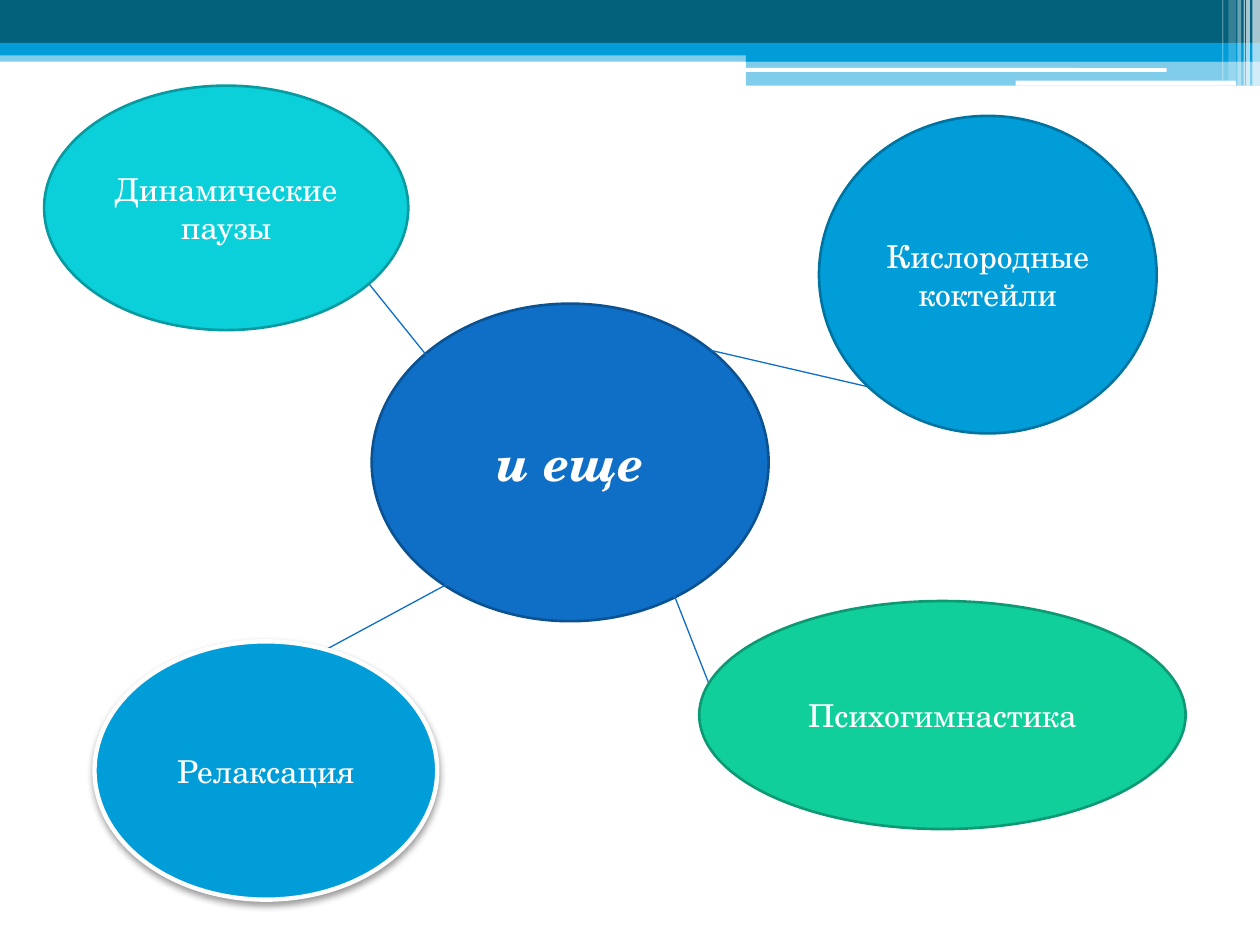
from lxml import etree
from pptx import Presentation
from pptx import util as u
from pptx.dml.color import RGBColor
from pptx.enum import shapes, text
from pptx.oxml import ns

KIND = shapes.MSO_SHAPE


def rgb(value):
    return RGBColor.from_string(value)


def add(parent, tag, **attrs):
    return etree.SubElement(parent, ns.qn(tag), attrs)


class Deck:
    font = "TeX Gyre Schola"
    white = "FFFFFF"
    dark = "04617B"
    blue = "009DD9"
    link = "0F6FC6"

    def __init__(self, width, height):
        self.prs = Presentation()
        self.prs.slide_width = u.Inches(width)
        self.prs.slide_height = u.Inches(height)
        self.s = self.prs.slides.add_slide(self.prs.slide_layouts[6])

    def shape(self, kind, box, color):
        sp = self.s.shapes.add_shape(kind, *[u.Inches(n) for n in box])
        sp.shadow.inherit = False
        sp.fill.solid()
        sp.fill.fore_color.rgb = rgb(color)
        sp.line.fill.background()
        return sp

    def bar(self, box, color, alpha=100, kind=KIND.RECTANGLE):
        sp = self.shape(kind, box, color)
        if alpha < 100:
            clr = sp._element.spPr.find(".//" + ns.qn("a:srgbClr"))
            add(clr, "a:alpha", val=str(alpha * 1000))

    def bubble(self, box, color, edge, words, size=18, strong=None, width=1.5):
        sp = self.shape(KIND.OVAL, box, color)
        sp.line.color.rgb = rgb(edge)
        sp.line.width = u.Pt(width)
        tf = sp.text_frame
        tf.word_wrap = True
        tf.vertical_anchor = text.MSO_ANCHOR.MIDDLE
        p = tf.paragraphs[0]
        p.alignment = text.PP_ALIGN.CENTER
        r = p.add_run()
        r.text = words
        r.font.name = self.font
        r.font.size = u.Pt(size)
        r.font.bold = r.font.italic = strong
        r.font.color.rgb = rgb(self.white)
        return sp

    def drop_shadow(self, sp):
        effects = sp._element.spPr.find(ns.qn("a:effectLst"))
        shadow = add(effects, "a:outerShdw", blurRad=str(u.Pt(4.1)), dist=str(u.Pt(2)),
                     dir="5400000", algn="ctr", rotWithShape="0")
        add(add(shadow, "a:srgbClr", val="000000"), "a:alpha", val="40000")

    def line(self, *ends):
        c = self.s.shapes.add_connector(shapes.MSO_CONNECTOR.STRAIGHT,
                                        *[u.Inches(n) for n in ends])
        c.line.color.rgb = rgb(self.link)
        c.line.width = u.Pt(0.75)
        add(c._element.spPr, "a:effectLst")


def main():
    d = Deck(10, 7.5)

    # Header bands
    d.bar((0, 0.4, 10, 0.09), d.blue, 50)
    d.bar((0, 0, 10, 0.34), d.dark)
    d.bar((0, 0.34, 10, 0.1), d.blue)
    d.bar((5.92, 0.39, 4.08, 0.1), d.blue)
    d.bar((5.92, 0.48, 4.08, 0.2), d.blue, 50)
    for box in ((5.91, 0.54, 3.35, 0.03), (8.06, 0.64, 1.75, 0.04)):
        d.bar(box, d.white, kind=KIND.ROUNDED_RECTANGLE)

    # Pale stripes at the right edge
    for left, width, height, alpha in (
            (9.94, 0.06, 0.68, 65), (9.89, 0.03, 0.68, 65), (9.87, 0.01, 0.68, 60),
            (9.82, 0.03, 0.68, 40), (9.75, 0.06, 0.64, 20), (9.7, 0.01, 0.64, 30)):
        d.bar((left, 0, width, height), d.white, alpha)

    # Central topic
    d.bubble((2.95, 2.41, 3.15, 2.52), d.link, "0B5292", "и еще", 28, True)

    # Branches: each line lies under its own bubble
    d.line(2.87, 2.18, 3.82, 3.36)
    d.bubble((0.35, 0.68, 2.89, 1.94), "0BD0D9", "089AA1", "Динамические паузы")
    d.line(5.64, 2.78, 6.89, 3.07)
    d.bubble((6.5, 0.92, 2.68, 2.52), d.blue, "0074A1", "Кислородные коктейли")
    d.line(3.58, 4.62, 2.56, 5.17)
    relax = d.bubble((0.75, 5.09, 2.72, 2.05), d.blue, d.white, "Релаксация", width=2.5)
    d.drop_shadow(relax)
    d.line(5.31, 4.62, 5.71, 5.64)
    d.bubble((5.55, 4.77, 3.86, 1.81), "10CF9B", "0C9973", "Психогимнастика")

    d.prs.save("out.pptx")


if __name__ == "__main__":
    main()
